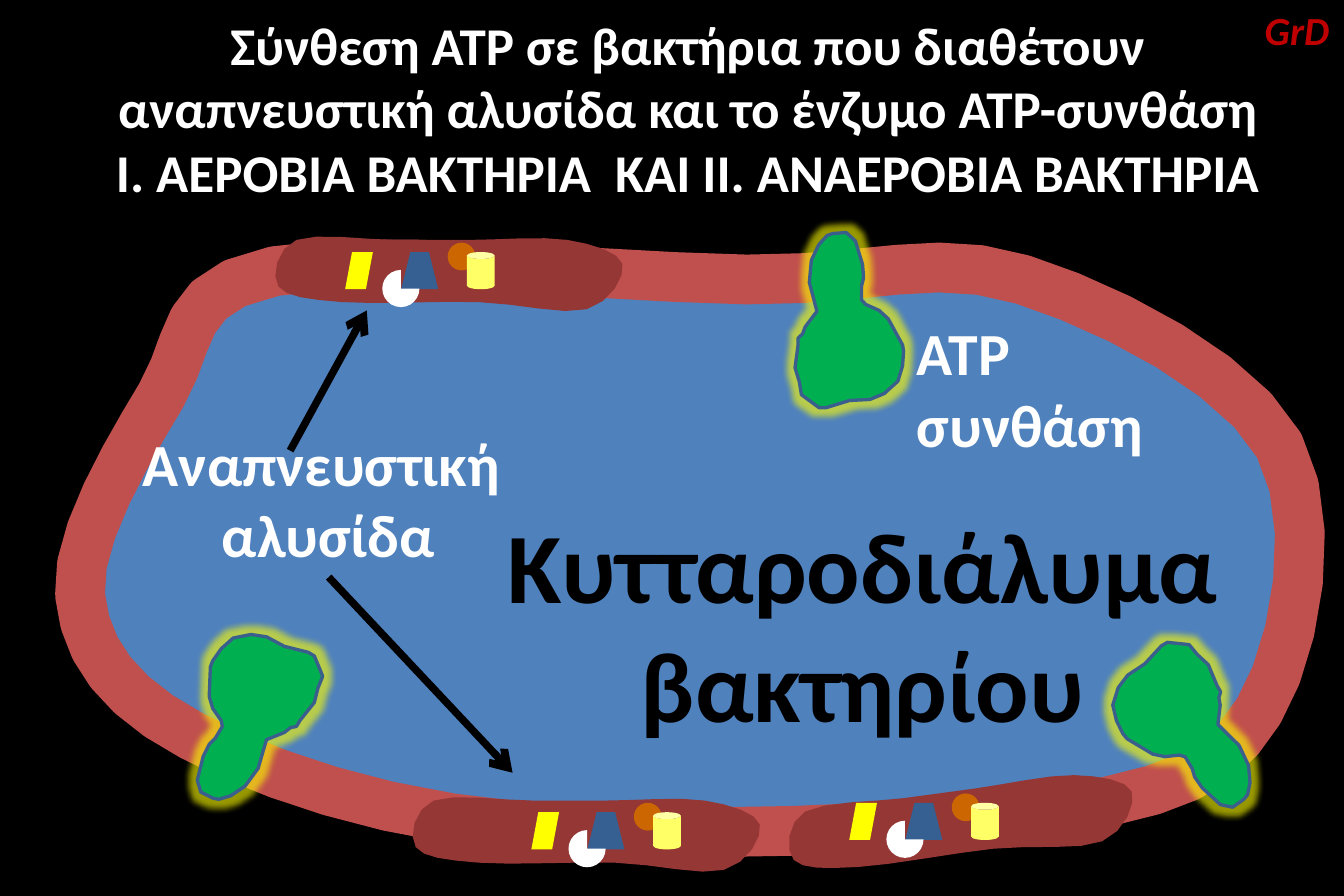
from lxml import etree
from pptx import Presentation
from pptx.dml.color import RGBColor
from pptx.enum.shapes import MSO_CONNECTOR as Link, MSO_SHAPE as Kind
from pptx.enum.text import MSO_ANCHOR as Anchor, MSO_AUTO_SIZE as Fit, PP_ALIGN as Align
from pptx.oxml.ns import qn
from pptx.util import Cm, Pt

UNIT = Cm(2.54) / 100  # outline points are hundredths of an inch

# Closed outlines: the points each smooth curve runs through
CELL = [(161, 616), (67, 498), (135, 331), (230, 227), (625, 234),
        (856, 234), (1071, 373), (1054, 595), (882, 679), (436, 692)]
PATCH = [(59, 58), (6, 45), (21, 6), (104, 6), (165, 6),
         (248, 6), (294, 26), (264, 64), (173, 58)]
ENZYME = [(31, 3), (46, 0), (59, 2), (74, 10), (94, 15),
          (99, 18), (104, 30), (106, 35), (102, 45), (99, 57),
          (87, 72), (84, 77), (79, 78), (74, 82), (59, 88),
          (56, 98), (52, 112), (41, 127), (29, 135), (19, 138), (14, 137),
          (4, 132), (1, 122), (6, 102), (11, 92), (16, 87), (22, 77),
          (21, 72), (14, 62), (11, 52), (12, 27), (14, 22), (21, 12)]

# Proteins of the chain: kind, left, top, width, height, colour
CHAIN = [
    (Kind.PARALLELOGRAM, 0, 0.2, 0.59, 0.79, "FFFF00"),
    (Kind.TRAPEZOID, 1.19, 0.2, 0.79, 0.79, "376092"),
    (Kind.OVAL, 2.18, 0, 0.59, 0.59, "CC6600"),
    (Kind.CAN, 2.59, 0.2, 0.59, 0.79, "FFFF66"),
    (Kind.PIE, 0.79, 0.58, 0.79, 0.79, "FFFFFF"),
]


def color(code):
    return RGBColor.from_string(code)


def paint(shape, fill, line=None, width=0):
    shape.shadow.inherit = False
    shape.fill.solid()
    shape.fill.fore_color.rgb = color(fill)
    if line:
        shape.line.color.rgb = color(line)
        shape.line.width = Pt(width)
    else:
        shape.line.fill.background()


def smooth(knots, steps):
    """Points of a closed Catmull-Rom curve through the knots."""
    count = len(knots)
    for i in range(count):
        near = [knots[(i + k) % count] for k in (-1, 0, 1, 2)]
        for step in range(steps):
            t = step / steps
            yield tuple(
                UNIT * (2 * b + (c - a) * t + (2 * a - 5 * b + 4 * c - d) * t ** 2
                        + (3 * b - a - 3 * c + d) * t ** 3) / 2
                for a, b, c, d in zip(*near))


def blob(slide, knots, steps, left, top, turn=0):
    first, *rest = smooth(knots, steps)
    pen = slide.shapes.build_freeform(*first)
    pen.add_line_segments(rest, close=True)
    shape = pen.convert_to_shape(Cm(left), Cm(top))
    shape.rotation = turn
    return shape


def write(shape, lines, align, style):
    frame = shape.text_frame
    frame.text = "\n".join(lines)
    for para in frame.paragraphs:
        para.alignment = align
        for run in para.runs:
            run.font.color.rgb = color(style["color"])
            look = {"name": "Calibri", "bold": True, "size": Pt(style["size"]),
                    "italic": style.get("italic", False)}
            for key, value in look.items():
                setattr(run.font, key, value)


def title(slide, left, top, width, height):
    shape = slide.shapes.title
    box = {"left": left, "top": top, "width": width, "height": height}
    for key, value in box.items():
        setattr(shape, key, Cm(value))
    write(shape, ["Σύνθεση ΑΤΡ σε βακτήρια που διαθέτουν αναπνευστική αλυσίδα "
                  "και το ένζυμο ΑΤΡ-συνθάση",
                  "Ι. ΑΕΡΟΒΙΑ ΒΑΚΤΗΡΙΑ  ΚΑΙ ΙΙ. ΑΝΑΕΡΟΒΙΑ ΒΑΚΤΗΡΙΑ"],
          Align.CENTER, {"size": 32, "color": "FFFFFF"})
    shape.text_frame.auto_size = Fit.NONE
    shape.text_frame.vertical_anchor = Anchor.TOP


def label(slide, box, lines, align, wrap=False, **style):
    shape = slide.shapes.add_textbox(*map(Cm, box))
    shape.text_frame.word_wrap = wrap
    write(shape, lines, align, style)


def chain(slide, left, top):
    group = slide.shapes.add_group_shape()
    for kind, x, y, width, height, fill in CHAIN:
        part = group.shapes.add_shape(
            kind, Cm(left + x), Cm(top + y), Cm(width), Cm(height))
        paint(part, fill)


def enzyme(slide, left, top, turn):
    shape = blob(slide, ENZYME, 1, left, top, turn)
    paint(shape, "00B050", "3A5F8C", 2)
    effects = shape._element.spPr.find(qn("a:effectLst"))
    glow = etree.SubElement(effects, qn("a:glow"), rad="101600")
    tint = etree.SubElement(glow, qn("a:srgbClr"), val="FFFF00")
    etree.SubElement(tint, qn("a:alpha"), val="60000")


def arrow(slide, *ends):
    link = slide.shapes.add_connector(Link.STRAIGHT, *map(Cm, ends))
    link.line.color.rgb = color("000000")
    link.line.width = Pt(4.5)
    etree.SubElement(link.line._get_or_add_ln(), qn("a:tailEnd"), type="arrow")
    etree.SubElement(link._element.spPr, qn("a:effectLst"))


def main():
    deck = Presentation()
    deck.slide_width, deck.slide_height = Cm(28.58), Cm(19.05)
    slide = deck.slides.add_slide(deck.slide_layouts[5])
    slide.background.fill.solid()
    slide.background.fill.fore_color.rgb = color("000000")
    title(slide, 1.63, 0.13, 26.01, 4.37)

    # Cell with its membrane
    paint(blob(slide, CELL, 6, 0, 0), "4F81BD", "C0504D", 30)

    # Membrane patches, each with a respiratory chain
    for patch, spot in [((5.77, 4.95, 0), (7.34, 5.16)),
                        ((8.69, 16.87, 0), (11.3, 17.07)),
                        ((16.66, 16.66, 352.3), (18.06, 16.87))]:
        paint(blob(slide, PATCH, 4, *patch), "953735")
        chain(slide, *spot)

    # Labels
    label(slide, (2.74, 8.94, 8.48, 3.33), ["Αναπνευστική ", "αλυσίδα"],
          Align.CENTER, size=36, color="FFFFFF")
    label(slide, (19.25, 6.6, 5.36, 3.33), ["ATP", "συνθάση"],
          Align.LEFT, size=36, color="FFFFFF")
    label(slide, (10.46, 10.59, 15.77, 5.38), ["Κυτταροδιάλυμα", "βακτηρίου"],
          Align.CENTER, size=60, color="000000")
    label(slide, (26.54, 0, 2.08, 1.27), ["GrD"], Align.CENTER,
          wrap=True, size=24, color="C00000", italic=True)

    # ATP synthases
    for place in [(16.38, 5.21, 149), (4.17, 13.49, 0), (24.05, 13.54, 298.6)]:
        enzyme(slide, *place)

    # Arrows from the chain label
    arrow(slide, 6.99, 12.27, 10.9, 16.43)
    arrow(slide, 6.17, 9.58, 7.8, 6.6)

    deck.save("out.pptx")


if __name__ == "__main__":
    main()
